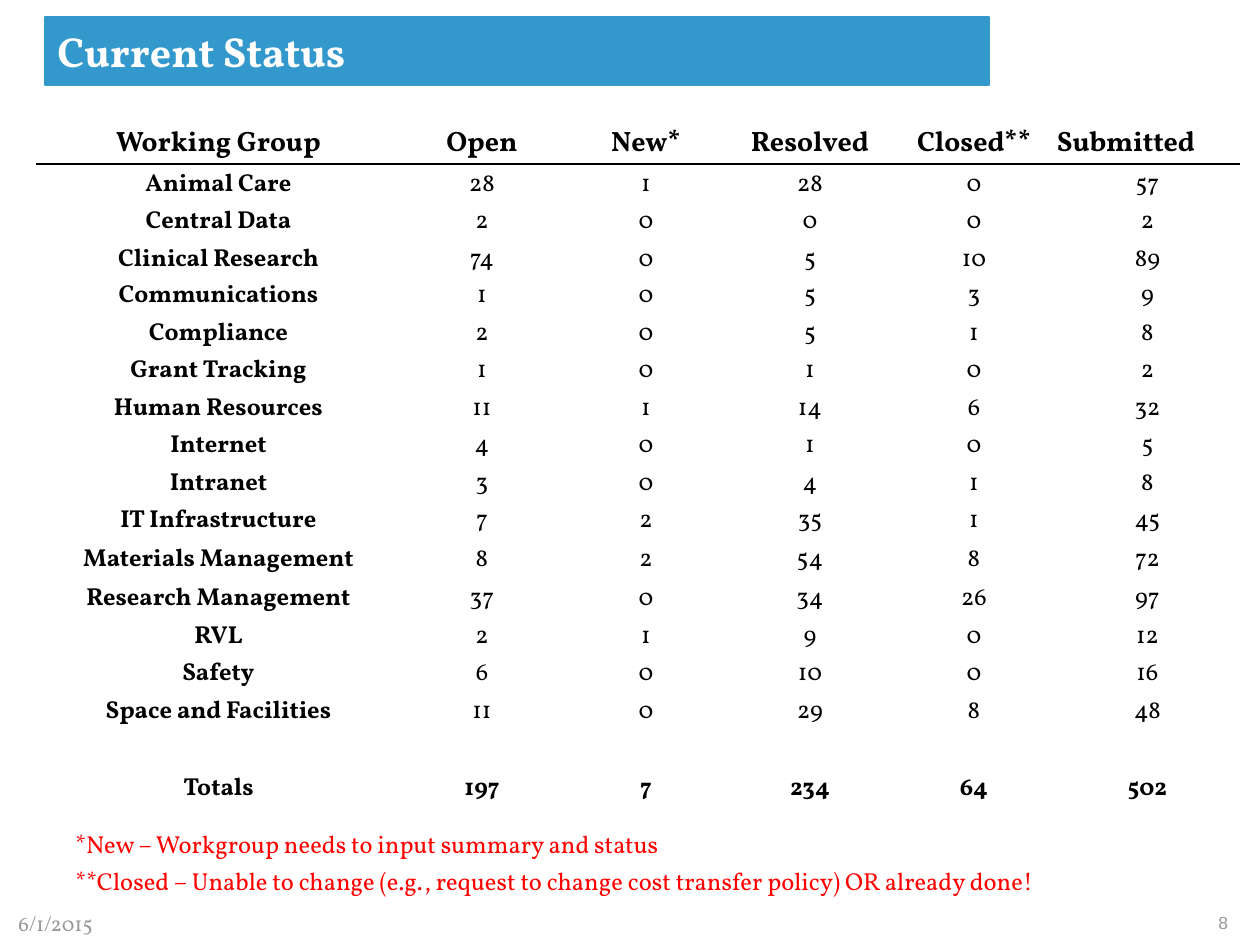
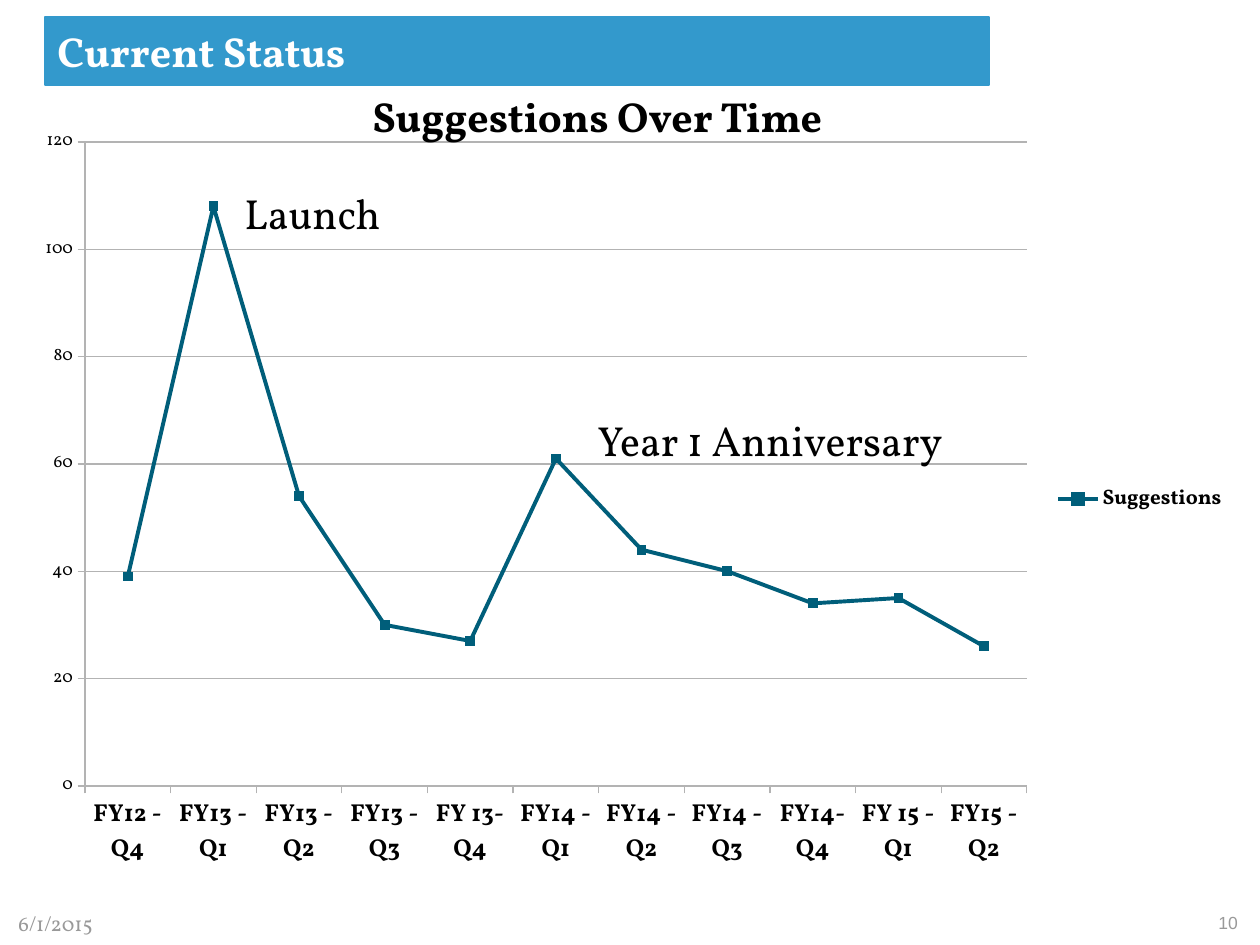
from lxml import etree
from pptx import Presentation
from pptx.chart.data import CategoryChartData
from pptx.dml.color import RGBColor
from pptx.enum.chart import XL_CHART_TYPE as ChartType, XL_LEGEND_POSITION as LegendPos
from pptx.enum.chart import XL_MARKER_STYLE as MarkerStyle, XL_TICK_MARK as TickMark
from pptx.enum.shapes import MSO_SHAPE as Shape
from pptx.enum.text import MSO_ANCHOR as Anchor, PP_ALIGN as Align
from pptx.oxml import parse_xml
from pptx.oxml.ns import nsdecls, qn
from pptx.util import Emu, Pt

BLUE = RGBColor(0x33, 0x99, 0xCC)
TEAL = RGBColor(0x00, 0x5E, 0x7A)
RED = RGBColor(0xFF, 0x00, 0x00)
GREY = RGBColor(0x99, 0x99, 0x99)
RULE = RGBColor(0xB3, 0xB3, 0xB3)
BLACK = RGBColor(0x00, 0x00, 0x00)
WHITE = RGBColor(0xFF, 0xFF, 0xFF)
FONT = "Vollkorn"


def px(*lengths):
    return [Emu(round(length * 914400 / 126)) for length in lengths]


def write(frame, lines, size, color, bold=False, font=FONT, align=Align.LEFT, gap=0):
    for i, line in enumerate(lines):
        paragraph = frame.paragraphs[0] if i == 0 else frame.add_paragraph()
        paragraph.text = line
        paragraph.alignment = align
        if i:
            paragraph.space_before = Pt(gap)
        paragraph.font.name = font
        paragraph.font.size = Pt(size)
        paragraph.font.bold = bold
        paragraph.font.color.rgb = color


deck = Presentation()
deck.slide_width, deck.slide_height = px(1260, 945)

for number in ("8", "10"):
    slide = deck.slides.add_slide(deck.slide_layouts[6])
    banner = slide.shapes.add_shape(Shape.RECTANGLE, *px(45, 17, 944, 68))
    banner.shadow.inherit = False
    banner.fill.solid()
    banner.fill.fore_color.rgb = BLUE
    banner.line.color.rgb = BLUE
    banner.line.width = Pt(0.75)
    banner.text_frame.vertical_anchor = Anchor.MIDDLE
    write(banner.text_frame, ["Current Status"], 24, WHITE, bold=True)

    date = slide.shapes.add_textbox(*px(6, 904, 112, 38)).text_frame
    date.word_wrap = False
    write(date, ["6/1/2015"], 12, GREY)
    page = slide.shapes.add_textbox(*px(1206, 906, 46, 34)).text_frame
    page.word_wrap = False
    write(page, [number], 10, GREY, font="Arial")

status_slide, trend_slide = deck.slides

status = [
    ("Working Group", "Open", "New*", "Resolved", "Closed**", "Submitted"),
    ("Animal Care", 28, 1, 28, 0, 57),
    ("Central Data", 2, 0, 0, 0, 2),
    ("Clinical Research", 74, 0, 5, 10, 89),
    ("Communications", 1, 0, 5, 3, 9),
    ("Compliance", 2, 0, 5, 1, 8),
    ("Grant Tracking", 1, 0, 1, 0, 2),
    ("Human Resources", 11, 1, 14, 6, 32),
    ("Internet", 4, 0, 1, 0, 5),
    ("Intranet", 3, 0, 4, 1, 8),
    ("IT Infrastructure", 7, 2, 35, 1, 45),
    ("Materials Management", 8, 2, 54, 8, 72),
    ("Research Management", 37, 0, 34, 26, 97),
    ("RVL", 2, 1, 9, 0, 12),
    ("Safety", 6, 0, 10, 0, 16),
    ("Space and Facilities", 11, 0, 29, 8, 48),
    ("",) * 6,
    ("Totals", 197, 7, 234, 64, 502),
]
table = status_slide.shapes.add_table(len(status), 6, *px(37, 123, 1202, 679)).table
table.first_row = False
table.horz_banding = False
for column, width in zip(table.columns, px(363, 164, 164, 164, 164, 183)):
    column.width = width

header, totals = 0, len(status) - 1
for r, record in enumerate(status):
    height = 41 if r == header else 39 if r in (11, 12) else 37 + r % 2
    table.rows[r].height = px(height)[0]
    for c, value in enumerate(record):
        cell = table.cell(r, c)
        cell.vertical_anchor = Anchor.BOTTOM
        cell.margin_left, cell.margin_right, cell.margin_top, cell.margin_bottom = px(1, 1, 1, 0)
        cell.fill.background()
        if record[0]:
            align = Align.LEFT if value == "Submitted" else Align.CENTER
            write(cell.text_frame, [str(value)], 16 if r == header else 14, BLACK,
                  bold=c == 0 or r in (header, totals), align=align)
        if r < 2:
            edge = "lnB" if r == header else "lnT"
            cell._tc.get_or_add_tcPr().insert(0, parse_xml(
                f'<a:{edge} {nsdecls("a")} w="12700"><a:solidFill>'
                f'<a:srgbClr val="{BLACK}"/></a:solidFill></a:{edge}>'))

notes = status_slide.shapes.add_textbox(*px(63, 823, 1166, 87)).text_frame
notes.word_wrap = True
write(notes, [
    "*New – Workgroup needs to input summary and status",
    "**Closed – Unable to change (e.g., request to change cost transfer policy) OR already done!",
], 14, RED, gap=4.5)

data = CategoryChartData()
data.categories = ["FY12 - Q4", "FY13 - Q1", "FY13 - Q2", "FY13 - Q3", "FY 13- Q4", "FY14 - Q1",
                   "FY14 - Q2", "FY14 - Q3", "FY14- Q4", "FY 15 - Q1", "FY15 - Q2"]
data.add_series("Suggestions", (39, 108, 54, 30, 27, 61, 44, 40, 34, 35, 26))
chart = trend_slide.shapes.add_chart(
    ChartType.LINE_MARKERS, *px(21, 116, 1218, 766), data).chart
chart.has_title = False
chart.font.name = FONT
chart.font.size = Pt(10)
chart.font.color.rgb = GREY
chart.has_legend = True
chart.legend.position = LegendPos.RIGHT
chart.legend.include_in_layout = False

plot = chart.plots[0]
plot.vary_by_categories = False
suggestions = plot.series[0]
suggestions.smooth = False
suggestions.format.line.color.rgb = TEAL
suggestions.format.line.width = Pt(2.25)
suggestions.marker.style = MarkerStyle.SQUARE
suggestions.marker.size = 5
suggestions.marker.format.fill.solid()
suggestions.marker.format.fill.fore_color.rgb = TEAL
suggestions.marker.format.line.color.rgb = TEAL

quarters, counts = chart.category_axis, chart.value_axis
counts.minimum_scale, counts.maximum_scale, counts.major_unit = 0, 120, 20
counts.has_major_gridlines = True
for axis in (quarters, counts):
    axis.major_tick_mark = TickMark.OUTSIDE
    axis.format.line.color.rgb = RULE
counts.major_gridlines.format.line.color.rgb = RULE
for font, size, bold in ((quarters.tick_labels.font, 14, True),
                         (counts.tick_labels.font, 10, False),
                         (chart.legend.font, 12, True)):
    font.name = FONT
    font.size = Pt(size)
    font.bold = bold
    font.color.rgb = BLACK

plot_area = chart._chartSpace.chart.plotArea
for old in plot_area.findall(qn("c:layout")):
    plot_area.remove(old)
layout = etree.Element(qn("c:layout"))
manual = etree.SubElement(layout, qn("c:manualLayout"))
for tag, value in (("layoutTarget", "inner"), ("xMode", "edge"), ("yMode", "edge"),
                   ("x", 64 / 1218), ("y", 26 / 766), ("w", 942 / 1218), ("h", 644 / 766)):
    etree.SubElement(manual, qn(f"c:{tag}")).set("val", str(value))
plot_area.insert(0, layout)

for label, place, bold in (("Suggestions Over Time", (360, 84, 479, 63), True),
                           ("Launch", (232, 181, 166, 63), False),
                           ("Year 1 Anniversary", (585, 408, 384, 63), False)):
    callout = trend_slide.shapes.add_textbox(*px(*place)).text_frame
    callout.word_wrap = False
    write(callout, [label], 24, BLACK, bold=bold)

deck.save("out.pptx")
